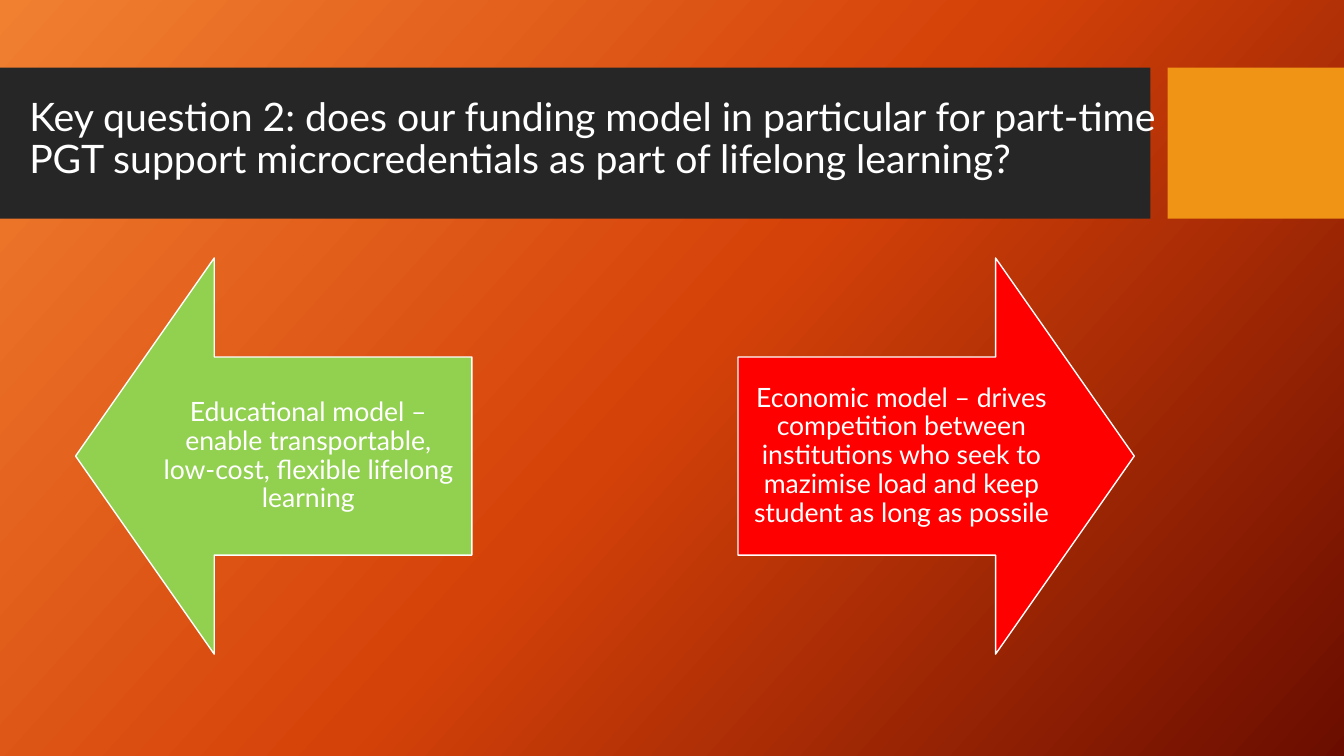
from copy import deepcopy
from dataclasses import dataclass

from pptx import Presentation
from pptx.dml.color import RGBColor
from pptx.enum.shapes import MSO_SHAPE as Shape
from pptx.enum.text import MSO_ANCHOR as Anchor, MSO_AUTO_SIZE as AutoSize, PP_ALIGN as Align
from pptx.oxml.ns import qn
from pptx.util import Inches, Pt

COLORS = {
    "light": "F18031",
    "middle": "D54209",
    "deep": "6A0D00",
    "band": "262626",
    "accent": "F09415",
    "education": "92D050",
    "economy": "FF0000",
    "white": "FFFFFF",
}
FONT = "Lato"
BAND_TOP, BAND_HEIGHT = 0.67, 1.5
ARROW_TOP, ARROW_SIZE = 2.56, 3.93


@dataclass
class Band:
    left: float
    width: float
    color: str


@dataclass
class Arrow:
    left: float
    kind: Shape
    color: str
    text: str


BANDS = [Band(0, 11.41, "band"), Band(11.58, 1.75, "accent")]
ARROWS = [
    Arrow(0.75, Shape.LEFT_ARROW, "education",
          "Educational model – enable transportable, low-cost, flexible lifelong learning"),
    Arrow(7.32, Shape.RIGHT_ARROW, "economy",
          "Economic model – drives competition between institutions who seek to "
          "mazimise load and keep student as long as possile"),
]


def rgb(name: str) -> RGBColor:
    return RGBColor.from_string(COLORS[name])


def paint_background(s) -> None:
    fill = s.background.fill
    fill.gradient()
    fill.gradient_angle = 360 - 42
    stops = s.element.find(f".//{qn('a:gsLst')}")
    stops.append(deepcopy(stops[-1]))
    for stop, position, name in zip(fill.gradient_stops, (0, 0.5, 1), ("light", "middle", "deep")):
        stop.position = position
        stop.color.rgb = rgb(name)


def add_filled(s, kind: Shape, left: float, top: float, width: float, height: float, color: str):
    sp = s.shapes.add_shape(kind, Inches(left), Inches(top), Inches(width), Inches(height))
    sp.shadow.inherit = False
    sp.fill.solid()
    sp.fill.fore_color.rgb = rgb(color)
    return sp


def write_text(sp, text: str, size: float, align: Align) -> None:
    tf = sp.text_frame
    tf.text = text
    tf.word_wrap = True
    tf.auto_size = AutoSize.NONE
    tf.vertical_anchor = Anchor.MIDDLE
    p = tf.paragraphs[0]
    p.alignment = align
    p.line_spacing = 0.9
    p.font.name = FONT
    p.font.size = Pt(size)
    p.font.color.rgb = rgb("white")


def add_band(s, band: Band) -> None:
    sp = add_filled(s, Shape.RECTANGLE, band.left, BAND_TOP, band.width, BAND_HEIGHT, band.color)
    sp.line.fill.background()


def add_title(s, text: str) -> None:
    title = s.shapes.title
    title.left, title.top = Inches(0.19), Inches(0.8)
    title.width, title.height = Inches(11.62), Inches(1.18)
    write_text(title, text, 28, Align.LEFT)
    s.shapes.element.append(title.element)


def add_arrow(s, arrow: Arrow) -> None:
    sp = add_filled(s, arrow.kind, arrow.left, ARROW_TOP, ARROW_SIZE, ARROW_SIZE, arrow.color)
    sp.adjustments[0], sp.adjustments[1] = 0.5, 0.35
    sp.line.color.rgb = rgb("white")
    sp.line.width = Pt(1)
    write_text(sp, arrow.text, 19, Align.CENTER)
    tf = sp.text_frame
    tf.margin_left = tf.margin_right = tf.margin_top = tf.margin_bottom = Inches(0.15)


def main() -> None:
    prs = Presentation()
    prs.slide_width, prs.slide_height = Inches(13.33), Inches(7.5)
    s = prs.slides.add_slide(prs.slide_layouts[5])
    paint_background(s)
    for band in BANDS:
        add_band(s, band)
    add_title(s, "Key question 2: does our funding model in particular for part-time "
                 "PGT support microcredentials as part of lifelong learning?")
    for arrow in ARROWS:
        add_arrow(s, arrow)
    prs.save("out.pptx")


if __name__ == "__main__":
    main()
